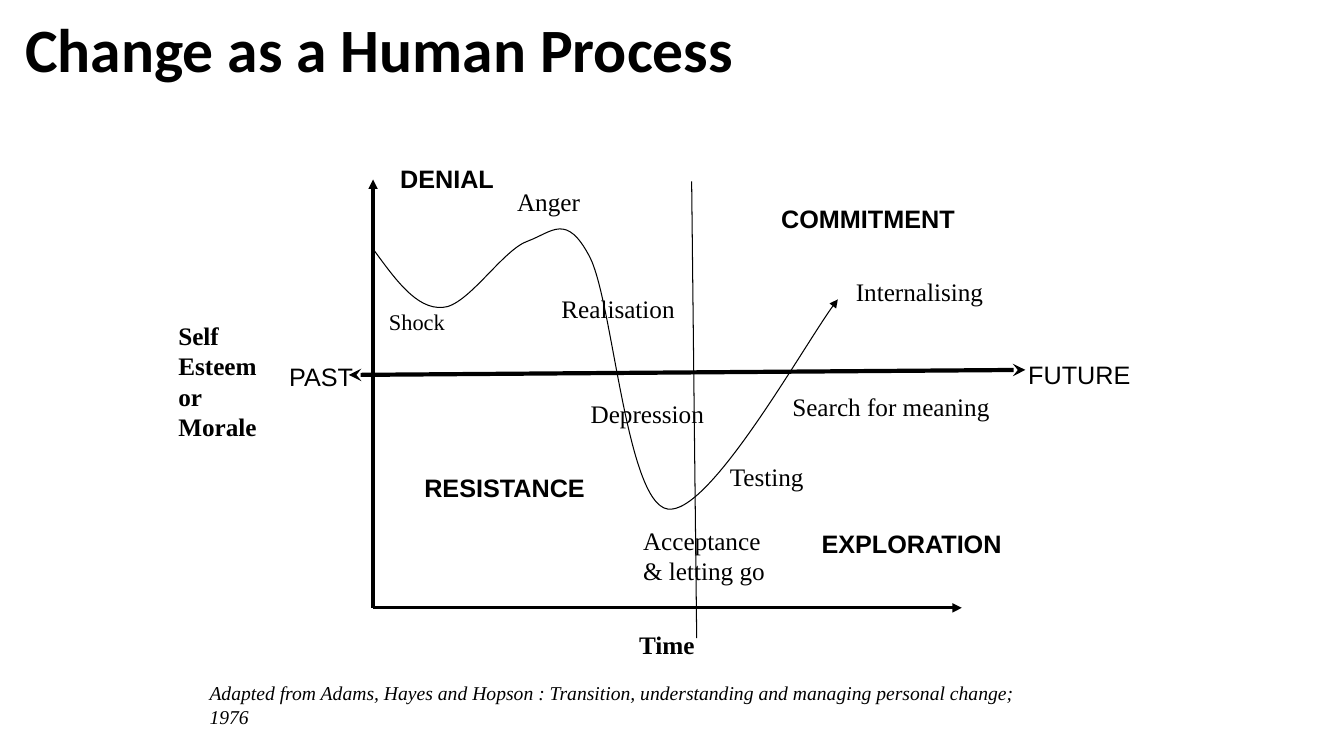
import pptx
import pptx.util
import pptx.dml.color
import pptx.enum.shapes
import pptx.enum.text
import pptx.oxml
import pptx.oxml.ns

Inches = pptx.util.Inches
BLACK = pptx.dml.color.RGBColor(0, 0, 0)
SERIF = "Times New Roman"
CURVE = [
    (0, 0.69),
    (0.22, 0.99), (0.43, 1.29), (0.69, 1.27),
    (0.94, 1.26), (1.29, 0.69), (1.54, 0.61),
    (1.78, 0.52), (1.92, 0.33), (2.15, 0.77),
    (2.38, 1.22), (2.51, 3.2), (2.92, 3.27),
    (3.33, 3.34), (4.33, 1.54), (4.61, 1.19),
]
STAGES = [
    ("Shock", 0.06, 1.23, 0.76, 16),
    ("Anger", 1.33, 0.02, 0.83, 18),
    ("Realisation", 1.77, 1.08, 1.33, 18),
    ("Depression", 2.06, 2.12, 1.33, 18),
    ("Acceptance\n& letting go", 2.58, 3.38, 1.43, 18),
    ("Testing", 3.44, 2.75, 0.94, 18),
    ("Search for meaning", 4.06, 2.05, 2.16, 18),
    ("Internalising", 4.69, 0.91, 1.53, 18),
]
PHASES = [
    ("DENIAL", 0.17, -0.21, 1.65, True),
    ("RESISTANCE", 0.41, 2.86, 2.01, True),
    ("EXPLORATION", 4.35, 3.41, 2.14, True),
    ("COMMITMENT", 3.95, 0.19, 2.06, True),
    ("PAST", -0.93, 1.76, 0.87, False),
    ("FUTURE", 6.4, 1.74, 1.26, False),
]


def style(frame, text, size=18, font=SERIF, bold=False, italic=False, wrap=False):
    frame.text = text
    frame.word_wrap = wrap
    for par in frame.paragraphs:
        par.alignment = pptx.enum.text.PP_ALIGN.LEFT
        face = par.runs[0].font
        face.name, face.size = font, pptx.util.Pt(size)
        face.bold, face.italic = bold, italic
        face.color.rgb = BLACK


def label(slide, text, left, top, width, **form):
    height = 0.1 + 0.3 * (text.count("\n") + 1)
    box = slide.shapes.add_textbox(
        Inches(left), Inches(top), Inches(width), Inches(height))
    style(box.text_frame, text, **form)


def stroke(shape, weight, head=None, tail=None):
    shape.line.color.rgb = BLACK
    shape.line.width = pptx.util.Pt(weight)
    edge = shape.line._get_or_add_ln()
    for tag, kind in (("a:headEnd", head), ("a:tailEnd", tail)):
        if kind:
            end = pptx.oxml.xmlchemy.OxmlElement(tag)
            end.set("type", kind)
            edge.append(end)


def line(slide, start, stop, weight, **ends):
    link = slide.shapes.add_connector(
        pptx.enum.shapes.MSO_CONNECTOR.STRAIGHT,
        *(Inches(num) for num in (*start, *stop)))
    stroke(link, weight, **ends)
    link._element.spPr.append(pptx.oxml.xmlchemy.OxmlElement("a:effectLst"))


def curve(slide, left, top):
    spots = [(Inches(left + x), Inches(top + y)) for x, y in CURVE]
    form = slide.shapes.build_freeform(*spots[0])
    form.add_line_segments(spots[1:], close=False)
    shape = form.convert_to_shape()
    shape.fill.background()
    shape.shadow.inherit = False
    stroke(shape, 0.75, tail="triangle")
    name = pptx.oxml.ns.qn
    route = next(shape._element.iter(name("a:path")))
    steps = route.findall(name("a:lnTo"))
    for idx in range(0, len(steps), 3):
        bend = pptx.oxml.xmlchemy.OxmlElement("a:cubicBezTo")
        for step in steps[idx:idx + 3]:
            bend.append(step[0])
            route.remove(step)
        route.append(bend)


def heading(slide, left, top, width, height):
    title = slide.shapes.title
    title.left, title.top = Inches(left), Inches(top)
    title.width, title.height = Inches(width), Inches(height)
    style(title.text_frame, "Change as a Human Process",
          size=44, font="Calibri", bold=True, wrap=True)
    title.text_frame.vertical_anchor = pptx.enum.text.MSO_ANCHOR.MIDDLE
    title.text_frame.paragraphs[0].line_spacing = 0.9


def axes(slide, left, top, width, height):
    base = top + height
    line(slide, (left, top), (left, base), 2.25, head="triangle")
    line(slide, (left, base), (left + width, base), 2.25, tail="triangle")
    line(slide, (left + 3.16, top + 0.02), (left + 3.21, base + 0.3), 0.75)
    line(slide, (left - 0.24, top + 1.94), (left + 6.47, top + 1.89), 3,
         head="stealth", tail="stealth")
    label(slide, "Self\nEsteem\nor\nMorale", left - 2.03, top + 1.35, 1.09,
          bold=True, wrap=True)
    label(slide, "Time", left + 2.54, base + 0.16, 0.82, bold=True)


def graph(slide, left, top, width, height):
    axes(slide, left, top, width, height)
    curve(slide, left, top)
    for text, x, y, span, size in STAGES:
        label(slide, text, left + x, top + y, span, size=size)
    for text, x, y, span, bold in PHASES:
        label(slide, text, left + x, top + y, span,
              font="Arial", bold=bold, wrap=True)


def main():
    deck = pptx.Presentation()
    deck.slide_width, deck.slide_height = Inches(13.33), Inches(7.5)
    slide = deck.slides.add_slide(deck.slide_layouts[5])
    heading(slide, 0.15, -0.01, 9, 1.07)
    graph(slide, 3.7, 1.78, 5.84, 4.25)
    label(slide, "Adapted from Adams, Hayes and Hopson : Transition, "
          "understanding and managing personal change; 1976",
          1.98, 6.71, 8.6, size=14, italic=True)
    deck.save("out.pptx")


if __name__ == "__main__":
    main()
